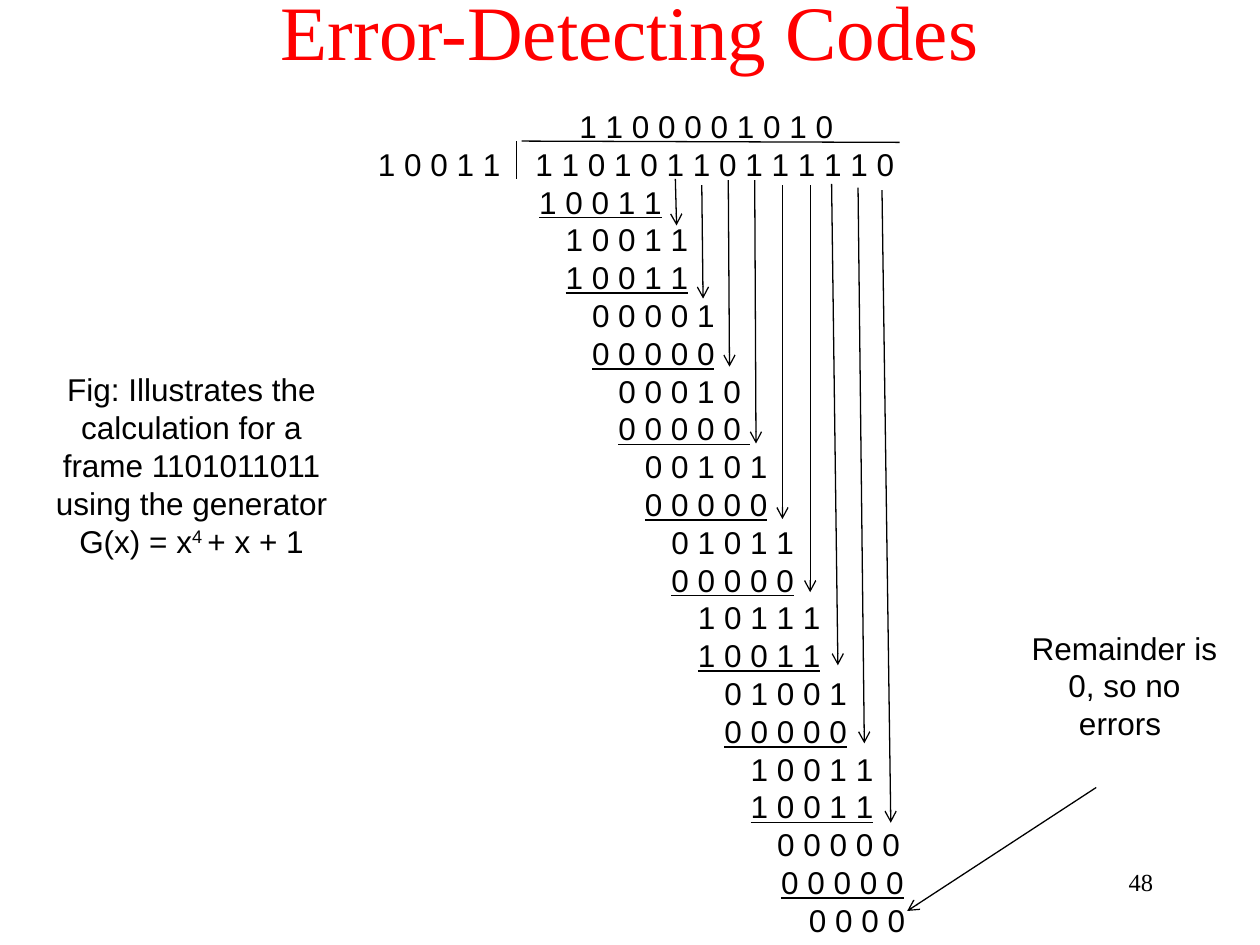
from dataclasses import dataclass

from lxml import etree
from pptx import Presentation
from pptx import util as u
from pptx.dml import color
from pptx.enum import shapes, text
from pptx.oxml import ns

Inches = u.Inches


@dataclass(frozen=True)
class Theme:
    ink: color.RGBColor = color.RGBColor(0, 0, 0)
    title: color.RGBColor = color.RGBColor(255, 0, 0)
    sans: str = "Arial"
    serif: str = "Times New Roman"
    title_size: int = 44
    body_size: int = 18
    number_size: int = 14
    line: float = 0.75


@dataclass(frozen=True)
class Box:
    x: float
    y: float
    w: float
    h: float

    def at(self, dx, dy):
        return Inches(self.x + dx), Inches(self.y + dy)

    def place(self):
        return *self.at(0, 0), Inches(self.w), Inches(self.h)


THEME = Theme()
DIGIT_STEP = 0.21
FIRST_INDENT = 1.35

QUOTIENT = "1 1 0 0 0 0 1 0 1 0"
DIVISOR = "1 0 0 1 1"
DIVIDEND = "1 1 0 1 0 1 1 0 1 1 1 1 1 0"
STEPS = [
    (0, "1 0 0 1 1", True),
    (1, "1 0 0 1 1", False), (1, "1 0 0 1 1", True),
    (2, "0 0 0 0 1", False), (2, "0 0 0 0 0", True),
    (3, "0 0 0 1 0", False), (3, "0 0 0 0 0 ", True),
    (4, "0 0 1 0 1", False), (4, "0 0 0 0 0", True),
    (5, "0 1 0 1 1", False), (5, "0 0 0 0 0", True),
    (6, "1 0 1 1 1", False), (6, "1 0 0 1 1", True),
    (7, "0 1 0 0 1", False), (7, "0 0 0 0 0", True),
    (8, "1 0 0 1 1", False), (8, "1 0 0 1 1", True),
    (9, "0 0 0 0 0", False), (9.15, "0 0 0 0 0", True),
    (10.2, "0 0 0 0", False),
]
BRING_DOWNS = [
    (2.53, 0.62, 2.54, 0.99), (2.74, 0.67, 2.75, 1.57),
    (2.95, 0.63, 2.96, 2.11), (3.16, 0.63, 3.17, 2.72),
    (3.38, 0.67, 3.38, 3.32), (3.6, 0.67, 3.6, 3.9),
    (3.77, 0.66, 3.82, 4.48), (3.98, 0.69, 4.03, 5.1),
    (4.17, 0.71, 4.24, 5.73),
]


def add_text(p, content, size=THEME.body_size, font=THEME.sans, ink=THEME.ink,
             align=None, underline=None, raised=False, margin=None, hang=0):
    r = p.add_run()
    r.text = content
    r.font.size = u.Pt(size)
    r.font.name = font
    r.font.color.rgb = ink
    r.font.underline = underline
    if raised:
        r.font._element.set("baseline", "30000")
    if align is not None:
        p.alignment = align
    if margin is not None:
        pPr = p._p.get_or_add_pPr()
        pPr.set("marL", str(Inches(margin)))
        pPr.set("indent", str(Inches(-hang)))
    return r


def add_box(s, box):
    tf = s.shapes.add_textbox(*box.place()).text_frame
    tf.word_wrap = True
    return tf


def add_line(parent, start, end, arrow=False):
    c = parent.add_connector(shapes.MSO_CONNECTOR.STRAIGHT, *start, *end)
    c.line.color.rgb = THEME.ink
    c.line.width = u.Pt(THEME.line)
    if arrow:
        etree.SubElement(c.line._get_or_add_ln(), ns.qn("a:tailEnd"), type="arrow")
    etree.SubElement(c._element.spPr, ns.qn("a:effectLst"))


def add_title(s, box):
    sp = s.shapes.title
    sp.left, sp.top, sp.width, sp.height = box.place()
    tf = sp.text_frame
    tf.auto_size = text.MSO_AUTO_SIZE.NONE
    tf.vertical_anchor = text.MSO_ANCHOR.MIDDLE
    add_text(tf.paragraphs[0], "Error-Detecting Codes", size=THEME.title_size,
             font=THEME.serif, ink=THEME.title, align=text.PP_ALIGN.CENTER)


def add_caption(s, box):
    p = add_box(s, box).paragraphs[0]
    add_text(p, "Fig: Illustrates the calculation for a frame 1101011011 "
                "using the generator G(x) = x", align=text.PP_ALIGN.CENTER)
    add_text(p, "4 ", raised=True)
    add_text(p, "+ x + 1")


def add_division(s, box):
    tf = add_box(s, box)
    add_text(tf.paragraphs[0], QUOTIENT, margin=1.67)
    add_text(tf.add_paragraph(), f"{DIVISOR}\t{DIVIDEND}", margin=1.32, hang=1.25)
    for step, digits, ruled in STEPS:
        add_text(tf.add_paragraph(), digits, underline=ruled,
                 margin=FIRST_INDENT + step * DIGIT_STEP)

    bracket = s.shapes.add_group_shape().shapes
    add_line(bracket, box.at(1.31, 0.32), box.at(4.31, 0.33))
    add_line(bracket, box.at(1.27, 0.32), box.at(1.27, 0.62))
    for x0, y0, x1, y1 in BRING_DOWNS:
        add_line(s.shapes, box.at(x0, y0), box.at(x1, y1), arrow=True)


def add_remainder(s, box):
    add_text(add_box(s, box).paragraphs[0], "Remainder is 0, so no errors ",
             align=text.PP_ALIGN.CENTER)
    add_line(s.shapes, box.at(0.64, 1.31), box.at(-0.86, 2.29), arrow=True)


def add_number(s, box):
    add_text(add_box(s, box).paragraphs[0], "48", size=THEME.number_size,
             font=THEME.serif, align=text.PP_ALIGN.RIGHT)


def main():
    prs = Presentation()
    prs.slide_width, prs.slide_height = Inches(10), Inches(7.5)
    s = prs.slides.add_slide(prs.slide_layouts.get_by_name("Title Only"))
    add_title(s, Box(0, 0, 10, 0.47))
    add_caption(s, Box(0.29, 2.89, 2.46, 1.62))
    add_division(s, Box(2.83, 0.8, 5.15, 6.77))
    add_remainder(s, Box(8.06, 4.94, 1.73, 1.01))
    add_number(s, Box(7.17, 6.83, 2.08, 0.5))
    prs.save("out.pptx")


if __name__ == "__main__":
    main()
